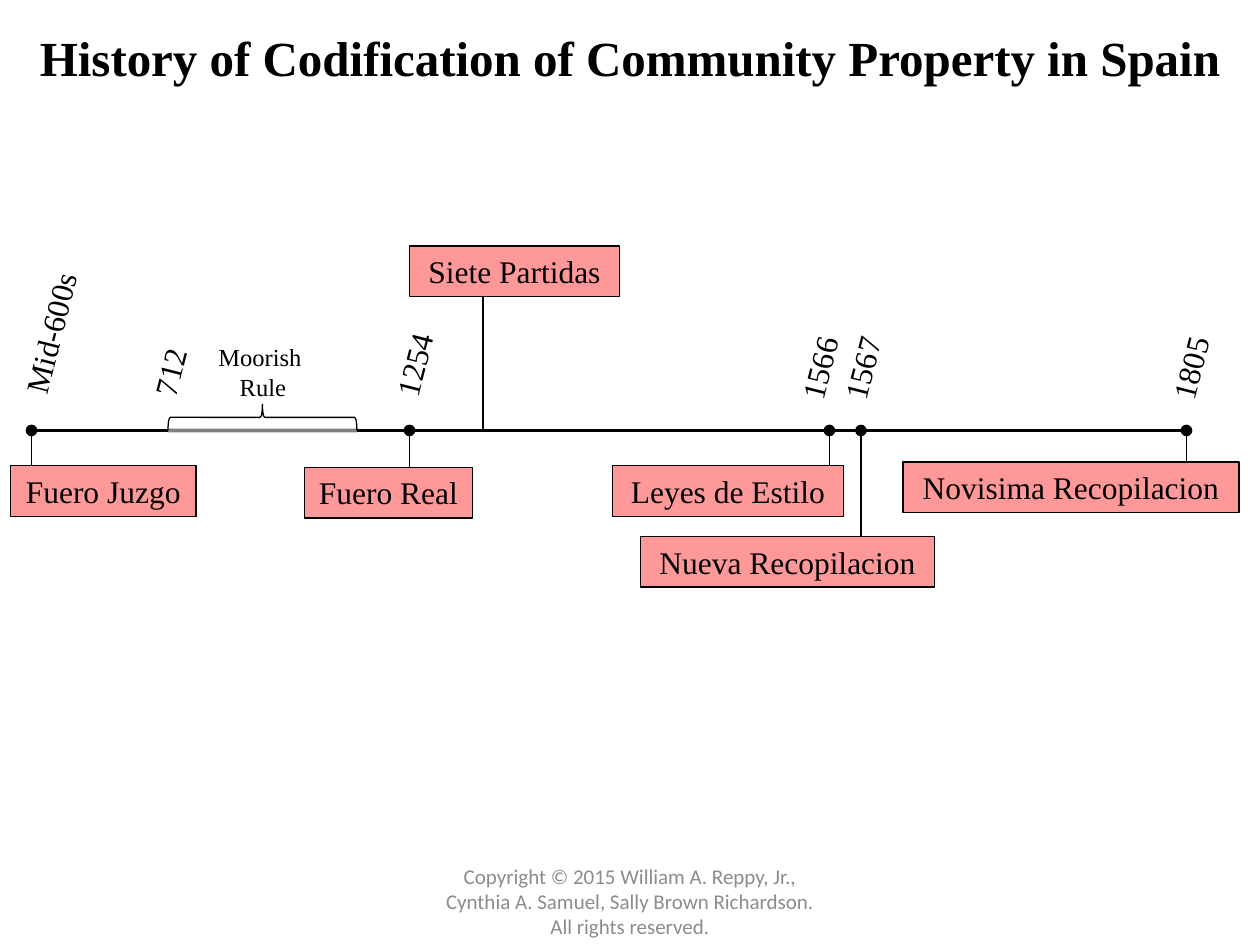
from lxml.etree import SubElement
from pptx import Presentation
from pptx.dml.color import RGBColor
from pptx.enum.shapes import MSO_CONNECTOR, MSO_SHAPE
from pptx.enum.text import MSO_ANCHOR, PP_ALIGN
from pptx.oxml.ns import qn
from pptx.util import Pt

BLACK = RGBColor(0x00, 0x00, 0x00)
PINK = RGBColor(0xFF, 0x99, 0x99)
GRAY = RGBColor(0x8C, 0x8C, 0x8C)
SERIF = "Times New Roman"
AXIS_Y = 246

presentation = Presentation()
presentation.slide_width = Pt(720)
presentation.slide_height = Pt(540)
slide = presentation.slides.add_slide(presentation.slide_layouts[6])
shapes = slide.shapes


def add_line(x1, y1, x2, y2, width):
    """Draw a black line without shadow and return its a:ln element."""
    line = shapes.add_connector(
        MSO_CONNECTOR.STRAIGHT, Pt(x1), Pt(y1), Pt(x2), Pt(y2))
    line.line.color.rgb = BLACK
    line.line.width = Pt(width)
    properties = line._element.spPr
    SubElement(properties, qn("a:effectLst"))
    return properties.find(qn("a:ln"))


def write(shape, lines, size, align=PP_ALIGN.CENTER, font=SERIF, color=BLACK, bold=False):
    """Fill a shape with one paragraph per line of text."""
    frame = shape.text_frame
    frame.word_wrap = True
    for index, line in enumerate(lines):
        paragraph = frame.add_paragraph() if index else frame.paragraphs[0]
        paragraph.alignment = align
        run = paragraph.add_run()
        run.text = line
        run.font.name = font
        run.font.size = Pt(size)
        run.font.bold = bold
        run.font.color.rgb = color


# Timeline: start, end, end that carries the dot, opacity in percent
segments = [
    (18, 96, "headEnd", 100),
    (96, 204, None, 50),
    (204, 234, "tailEnd", 100),
    (234, 474, "tailEnd", 100),
    (474, 492, "tailEnd", 100),
    (492, 678, "tailEnd", 100),
]
for start, end, dot, opacity in segments:
    outline = add_line(start, AXIS_Y, end, AXIS_Y, 2.25)
    if dot:
        SubElement(outline, qn(f"a:{dot}"), type="oval")
    if opacity < 100:
        color = outline.find(".//" + qn("a:srgbClr"))
        SubElement(color, qn("a:alpha"), val=str(opacity * 1000))

# Law codes: name, box left, top, width, x of the stem
BOX_HEIGHT = 29
codes = [
    ("Fuero Juzgo", 6, 266, 106, 18),
    ("Fuero Real", 174, 267, 96, 234),
    ("Siete Partidas", 234, 140.5, 120, 276),
    ("Leyes de Estilo", 350, 266, 132, 474),
    ("Nueva Recopilacion", 366, 306.5, 168, 492),
    ("Novisima Recopilacion", 516, 264, 192, 678),
]
for name, left, top, width, stem_x in codes:
    box_edge = top if top > AXIS_Y else top + BOX_HEIGHT
    add_line(stem_x, AXIS_Y, stem_x, box_edge, 1)
    box = shapes.add_shape(
        MSO_SHAPE.RECTANGLE, Pt(left), Pt(top), Pt(width), Pt(BOX_HEIGHT))
    box.shadow.inherit = False
    box.fill.solid()
    box.fill.fore_color.rgb = PINK
    box.line.color.rgb = BLACK
    box.line.width = Pt(0.75)
    write(box, [name], 18)
    box.text_frame.vertical_anchor = MSO_ANCHOR.TOP
    box.text_frame.word_wrap = False

# Slanted dates: text, left, top
dates = [
    ("Mid-600s", 20, 103),
    ("712", 93.5, 104.5),
    ("1254", 232, 104.5),
    ("1566", 463.5, 106.5),
    ("1567", 488, 106.5),
    ("1805", 675.5, 106.5),
]
for date, left, top in dates:
    label = shapes.add_textbox(Pt(left), Pt(top), Pt(36), Pt(131))
    label.rotation = 14.3
    write(label, [date], 18, PP_ALIGN.LEFT)
    label.text_frame._txBody.bodyPr.set("vert", "vert270")

# Moorish rule
brace = shapes.add_shape(
    MSO_SHAPE.RIGHT_BRACE, Pt(142.5), Pt(184.5), Pt(15), Pt(108))
brace.rotation = 270
brace.shadow.inherit = False
brace.fill.background()
brace.line.color.rgb = BLACK
brace.line.width = Pt(0.75)
period = shapes.add_textbox(Pt(97), Pt(192), Pt(106.5), Pt(41))
write(period, ["Moorish ", "Rule"], 14)

title = shapes.add_textbox(Pt(0), Pt(12), Pt(720), Pt(41))
write(title, ["History of Codification of Community Property in Spain"], 28, bold=True)

footer = shapes.add_textbox(Pt(246), Pt(500.5), Pt(228), Pt(28.75))
write(footer, ["Copyright © 2015 William A. Reppy, Jr., Cynthia A. Samuel, "
               "Sally Brown Richardson. All rights reserved."],
      12, font="Calibri", color=GRAY)
footer.text_frame.vertical_anchor = MSO_ANCHOR.MIDDLE

presentation.save("out.pptx")
